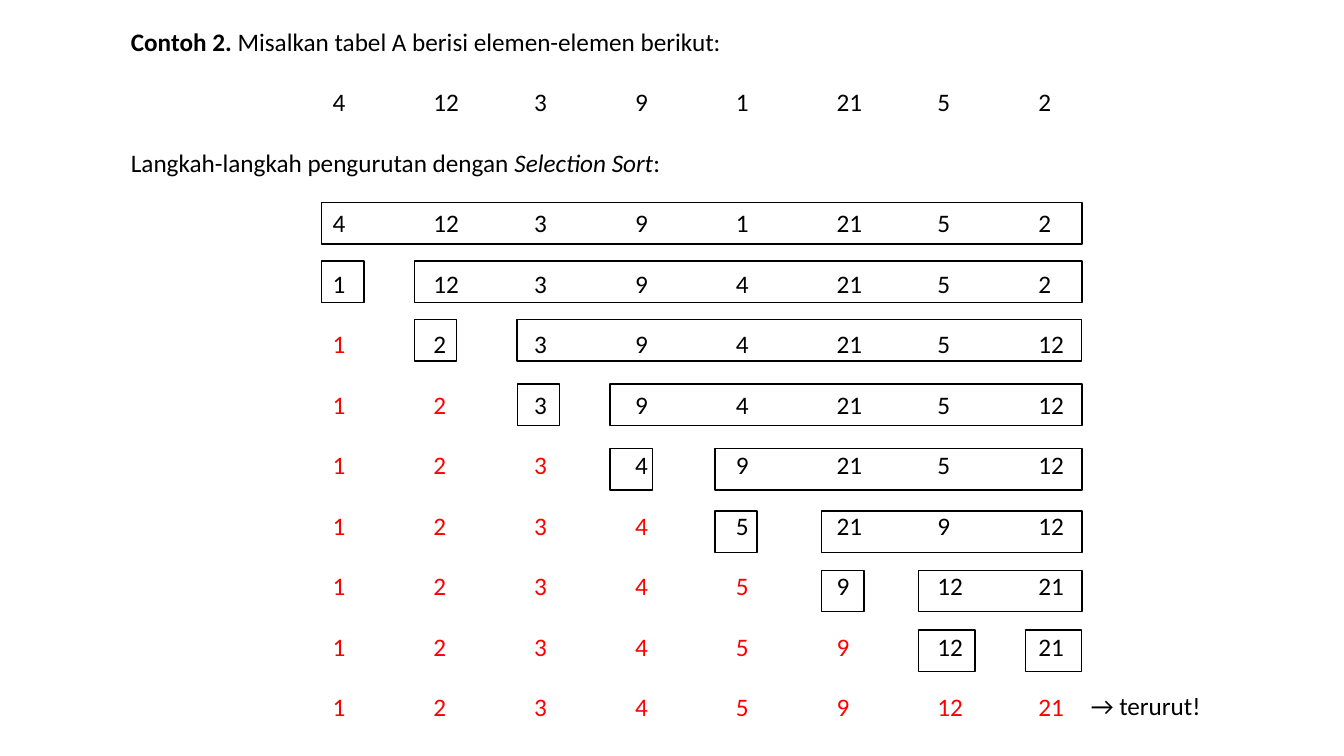
from lxml.etree import SubElement
from pptx import Presentation
from pptx.dml.color import RGBColor
from pptx.enum.shapes import MSO_SHAPE
from pptx.oxml.ns import qn
from pptx.util import Inches, Pt

THEME = {
    "font": "Calibri",
    "size": Pt(18),
    "row_gap": Pt(21.6),
    "line": Pt(1),
    "ink": RGBColor(0, 0, 0),
    "sorted": RGBColor(255, 0, 0),
}

TITLE = [("Contoh 2. ", "bold"), ("Misalkan tabel A berisi elemen-elemen berikut:", "")]
TABLE = [4, 12, 3, 9, 1, 21, 5, 2]
INTRO = [("Langkah-langkah pengurutan dengan ", ""), ("Selection Sort", "italic"), (":", "")]
RESULT = "→ terurut!"

# Each step: how many leading values are red, then the values
STEPS = [
    (0, TABLE),
    (0, [1, 12, 3, 9, 4, 21, 5, 2]),
    (1, [1, 2, 3, 9, 4, 21, 5, 12]),
    (2, [1, 2, 3, 9, 4, 21, 5, 12]),
    (3, [1, 2, 3, 4, 9, 21, 5, 12]),
    (4, [1, 2, 3, 4, 5, 21, 9, 12]),
    (5, [1, 2, 3, 4, 5, 9, 12, 21]),
    (6, [1, 2, 3, 4, 5, 9, 12, 21]),
    (8, [1, 2, 3, 4, 5, 9, 12, 21]),
]

TAB_STOPS = range(1, 10)
FRAME_LEFTS = [3.19, 4.11, 5.13, 6.05, 7.09, 8.15, 9.11, 10.17]
FRAME_TOPS = [2.01, 2.59, 3.17, 3.81, 4.45, 5.07, 5.66, 6.25]
FRAME_RIGHT = 10.73
FRAME_HEIGHT = 0.41


def add_span(para, text, style="", color="ink"):
    span = para.add_run()
    span.text = text
    span.font.name = THEME["font"]
    span.font.size = THEME["size"]
    span.font.color.rgb = THEME[color]
    span.font.bold = style == "bold"
    span.font.italic = style == "italic"


def add_text_box(page, left, top, width, height, wrap):
    box = page.shapes.add_textbox(Inches(left), Inches(top), Inches(width), Inches(height))
    box.text_frame.word_wrap = wrap
    return box.text_frame


def next_para(frame):
    para = frame.add_paragraph()
    para.space_before = THEME["row_gap"]
    return para


def add_tab_stops(para):
    tabs = SubElement(para._p.get_or_add_pPr(), qn("a:tabLst"))
    for stop in TAB_STOPS:
        SubElement(tabs, qn("a:tab"), pos=str(Inches(stop)), algn="l")


def add_values(frame, values, sorted_count=0):
    """Write one row of tabbed values, the sorted ones first in red."""
    para = next_para(frame)
    add_tab_stops(para)
    add_span(para, "\t")
    for color, part in (("sorted", values[:sorted_count]), ("ink", values[sorted_count:])):
        if part:
            add_span(para, "".join(f"\t{value}" for value in part), color=color)


def add_frame(page, left, top, width):
    frame = page.shapes.add_shape(
        MSO_SHAPE.RECTANGLE, Inches(left), Inches(top), Inches(width), Inches(FRAME_HEIGHT))
    frame.shadow.inherit = False
    frame.fill.background()
    frame.line.color.rgb = THEME["ink"]
    frame.line.width = THEME["line"]


def main():
    deck = Presentation()
    deck.slide_width, deck.slide_height = Inches(13.33), Inches(7.5)
    page = deck.slides.add_slide(deck.slide_layouts[6])

    body = add_text_box(page, 1.2, 0.21, 11.37, 7.07, True)
    for text, style in TITLE:
        add_span(body.paragraphs[0], text, style)
    add_values(body, TABLE)
    intro = next_para(body)
    for text, style in INTRO:
        add_span(intro, text, style)
    for sorted_count, values in STEPS:
        add_values(body, values, sorted_count)

    for step, (left, top) in enumerate(zip(FRAME_LEFTS, FRAME_TOPS)):
        add_frame(page, left, top, FRAME_RIGHT - left)
        if step:
            chosen = STEPS[step][1][step - 1]
            add_frame(page, FRAME_LEFTS[step - 1], top, 0.42 if chosen < 10 else 0.56)

    result = add_text_box(page, 10.72, 6.8, 1.32, 0.4, False)
    add_span(result.paragraphs[0], RESULT)
    deck.save("out.pptx")


if __name__ == "__main__":
    main()
